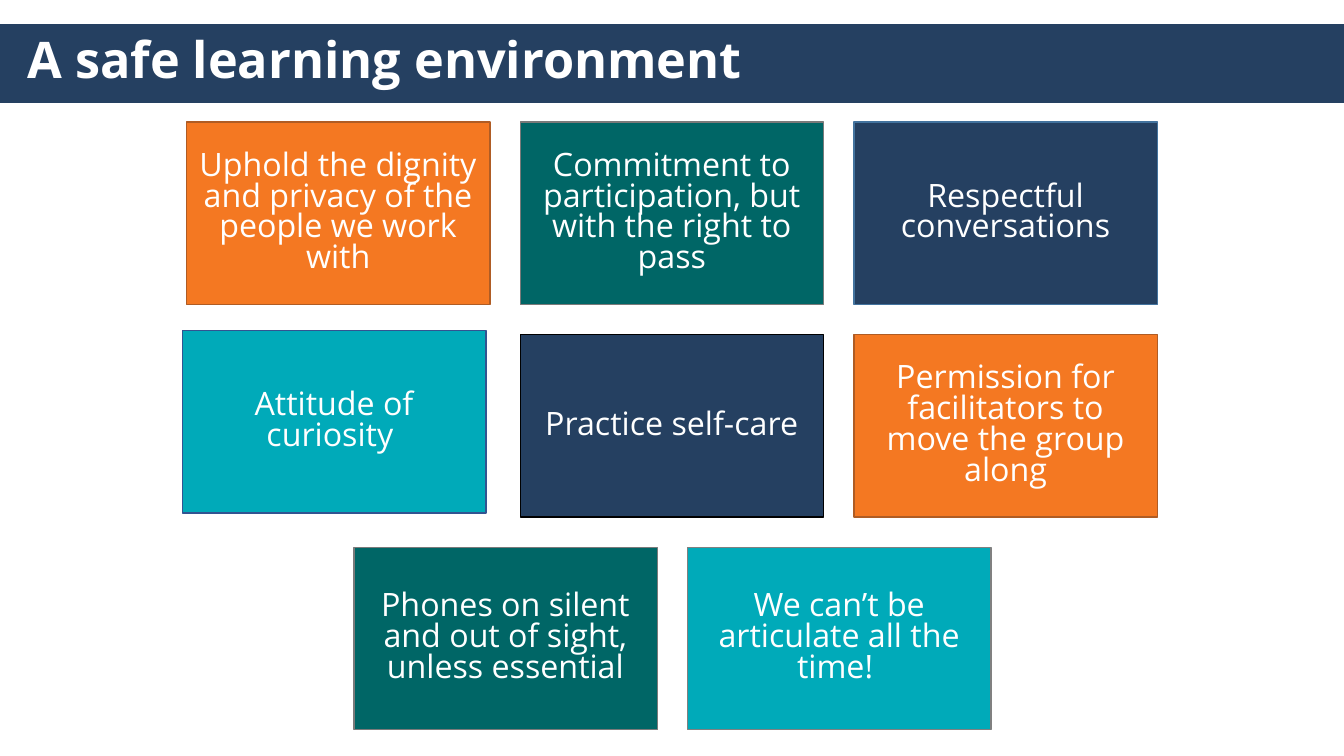
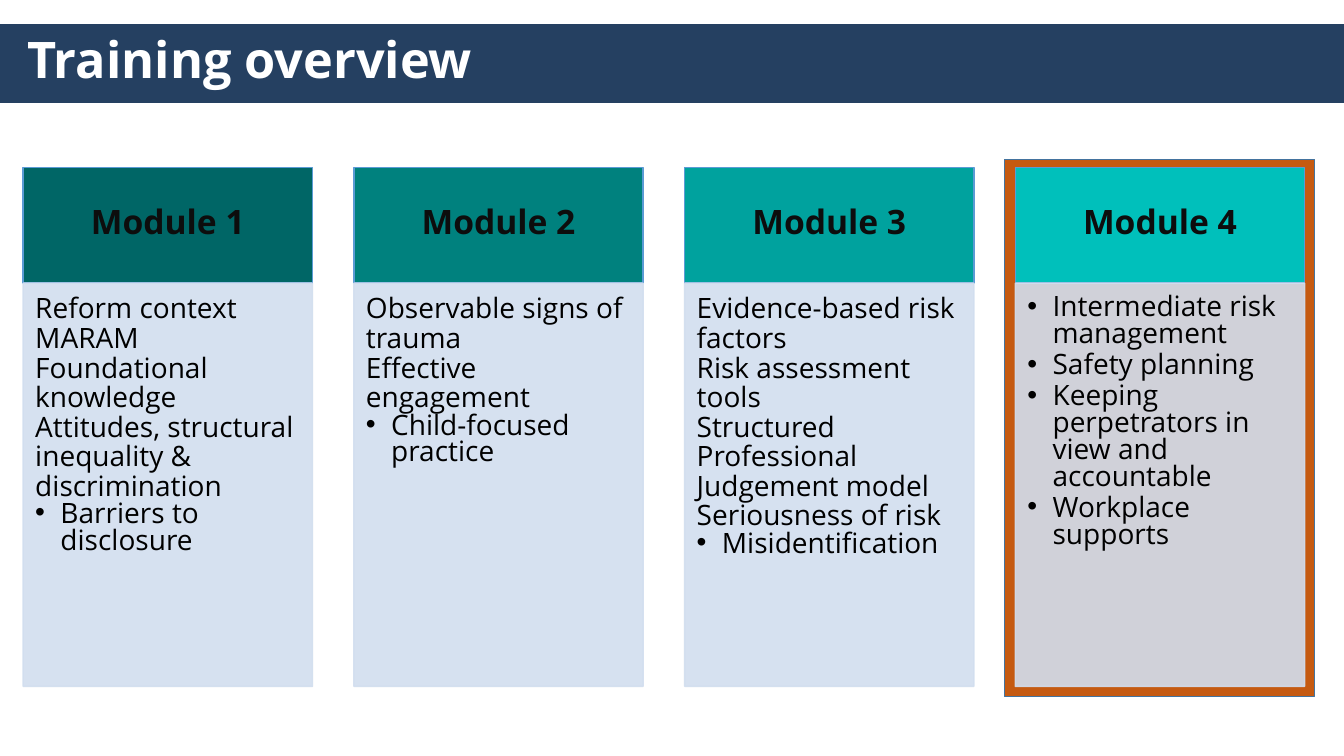
"""Build two training slides: group agreements and module overview."""
from lxml.etree import SubElement
from pptx import Presentation
from pptx.dml.color import RGBColor as RGB
from pptx.enum.shapes import MSO_SHAPE as Shape
from pptx.enum.text import MSO_ANCHOR as Anchor, MSO_AUTO_SIZE as Fit, PP_ALIGN as Align
from pptx.oxml.ns import qn
from pptx.util import Inches, Pt

FONT = "Open Sans"
WHITE = RGB(0xFF, 0xFF, 0xFF)
BLACK = RGB(0, 0, 0)
INK = RGB(0x0D, 0x0D, 0x0D)
NAVY = RGB(0x25, 0x40, 0x61)
ORANGE = RGB(0xF4, 0x78, 0x22)
RUST = RGB(0xAF, 0x5C, 0x24)
GREEN = RGB(0x00, 0x66, 0x66)
AQUA = RGB(0x00, 0xAA, 0xB9)
GREY = RGB(0x7A, 0x7A, 0x7A)
SILVER = RGB(0x80, 0x80, 0x80)
STEEL = RGB(0x43, 0x73, 0x9E)
BLUE = RGB(0x32, 0x54, 0x91)
SKY = RGB(0x5B, 0x9B, 0xD5)
PALE = RGB(0xD2, 0xDE, 0xEF)
FRAME = RGB(0xC5, 0x5A, 0x11)
TEALS = [GREEN, RGB(0x00, 0x81, 0x7E), RGB(0x00, 0xA2, 0x9E), RGB(0x00, 0xC0, 0xBB)]

deck = Presentation()
deck.slide_width, deck.slide_height = Inches(13.33), Inches(7.5)


def add_box(slide, x, y, w, h, fill, edge, pads=(0.1, 0.1, 0.1, 0.1)):
    box = slide.shapes.add_shape(Shape.RECTANGLE, Inches(x), Inches(y), Inches(w), Inches(h))
    box.shadow.inherit = False
    box.fill.solid()
    box.fill.fore_color.rgb = fill
    box.line.color.rgb = edge
    box.line.width = Pt(1)
    frame = box.text_frame
    frame.word_wrap = True
    frame.vertical_anchor = Anchor.MIDDLE
    frame.margin_left, frame.margin_top, frame.margin_right, frame.margin_bottom = map(Inches, pads)
    return box


def add_text(para, text, size, color, bold=False, align=Align.CENTER, gap=0.8):
    para.alignment = align
    para.line_spacing = gap
    run = para.add_run()
    run.text = text
    run.font.name = FONT
    run.font.size = Pt(size)
    run.font.bold = bold
    run.font.color.rgb = color


pages = []
for name in ["A safe learning environment", "Training overview"]:
    page = deck.slides.add_slide(deck.slide_layouts[5])
    band = add_box(page, 0, 0.25, 13.33, 0.77, NAVY, NAVY)
    title = page.shapes.title
    band._element.addnext(title._element)
    title.left, title.top, title.width, title.height = map(Inches, (0.17, 0.23, 11.5, 0.77))
    title.text_frame.auto_size = Fit.NONE
    title.text_frame.vertical_anchor = Anchor.MIDDLE
    add_text(title.text_frame.paragraphs[0], name, 36, WHITE, True, Align.LEFT, 0.9)
    pages.append(page)
safe, plan = pages

TILE_W, TILE_H, STEP_X, STEP_Y = 3.01, 1.81, 3.31, 2.11
rows = [
    (1.85, [
        ("Uphold the dignity and privacy of the people we work with", ORANGE, RUST, 0),
        ("Commitment to participation, but with the right to pass", GREEN, GREY, 0),
        ("Respectful conversations", NAVY, STEEL, 0),
    ]),
    (1.85, [
        ("Attitude of curiosity ", AQUA, BLUE, 0.04),
        ("Practice self-care", NAVY, BLACK, 0),
        ("Permission for facilitators to move the group along", ORANGE, RUST, 0),
    ]),
    (3.51, [
        ("Phones on silent and out of sight, unless essential", GREEN, GREY, 0),
        ("We can’t be articulate all the time! ", AQUA, SILVER, 0),
    ]),
]
for row, (left, tiles) in enumerate(rows):
    for col, (text, fill, edge, shift) in enumerate(tiles):
        x, y = left + col * STEP_X - shift, 1.21 + row * STEP_Y - shift
        tile = add_box(safe, x, y, TILE_W, TILE_H, fill, edge)
        add_text(tile.text_frame.paragraphs[0], text, 23, WHITE)

CARD_W, CARD_STEP = 2.87, 3.28
cards = [
    (["Reform context ", "MARAM", "Foundational knowledge",
      "Attitudes, structural inequality & discrimination"],
     ["Barriers to disclosure"]),
    (["Observable signs of trauma", "Effective engagement "],
     ["Child-focused practice"]),
    (["Evidence-based risk factors", "Risk assessment tools",
      "Structured Professional Judgement model", "Seriousness of risk"],
     ["Misidentification"]),
    ([],
     ["Intermediate risk management", "Safety planning",
      "Keeping perpetrators in view and accountable", "Workplace supports"]),
]
add_box(plan, 9.96, 1.58, 3.08, 5.33, FRAME, STEEL)
for col, (plain, points) in enumerate(cards):
    x = 0.23 + col * CARD_STEP
    head = add_box(plan, x, 1.66, CARD_W, 1.15, TEALS[col], SKY, (0.19, 0.11, 0.19, 0.11))
    add_text(head.text_frame.paragraphs[0], f"Module {col + 1}", 24, INK, True)

    body = add_box(plan, x, 2.81, CARD_W, 4, PALE, PALE, (0.12, 0.12, 0.16, 0.17))
    for tint in body._element.spPr.iter(qn("a:srgbClr")):
        SubElement(tint, qn("a:alpha"), val="90000")
    frame = body.text_frame
    frame.vertical_anchor = Anchor.TOP
    for num, text in enumerate(plain + points):
        para = frame.add_paragraph() if num else frame.paragraphs[0]
        dot = num >= len(plain)
        add_text(para, text, 20, BLACK, align=Align.LEFT, gap=0.8 if dot else 0.88)
        if dot:
            para.space_after = Pt(3)
            props = para._p.get_or_add_pPr()
            props.set("marL", str(Inches(0.25)))
            props.set("indent", str(-Inches(0.25)))
            SubElement(props, qn("a:buFont"), typeface="Arial")
            SubElement(props, qn("a:buChar"), char="•")

deck.save("out.pptx")
